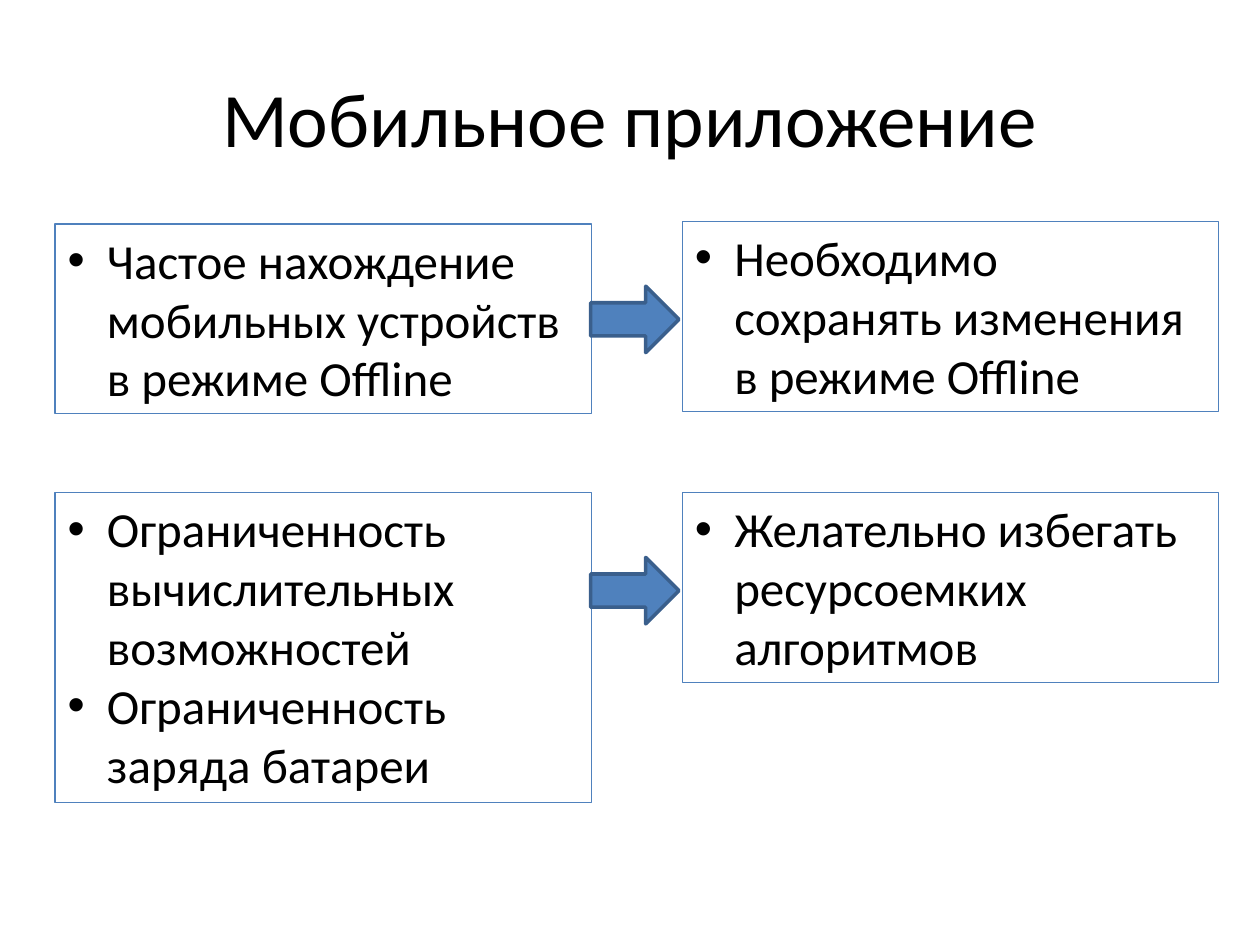
from dataclasses import dataclass

from lxml import etree
from pptx import Presentation
from pptx.dml.color import RGBColor
from pptx.enum.shapes import MSO_SHAPE
from pptx.enum.text import MSO_ANCHOR, MSO_AUTO_SIZE, PP_ALIGN
from pptx.oxml.ns import qn
from pptx.slide import Slide
from pptx.util import Pt

RECTANGLE = MSO_SHAPE.RECTANGLE
RIGHT_ARROW = MSO_SHAPE.RIGHT_ARROW
MIDDLE, TOP = MSO_ANCHOR.MIDDLE, MSO_ANCHOR.TOP
CENTER, LEFT = PP_ALIGN.CENTER, PP_ALIGN.LEFT
GROW = MSO_AUTO_SIZE.SHAPE_TO_FIT_TEXT
NO_AUTOFIT = MSO_AUTO_SIZE.NONE

BLACK = RGBColor(0x00, 0x00, 0x00)
BLUE = RGBColor(0x4F, 0x81, 0xBD)
DARK_BLUE = RGBColor(0x3A, 0x5F, 0x8C)

FONT = "Calibri"
BULLET_INDENT = Pt(22.5)
CAUSE_LEFT, EFFECT_LEFT, ARROW_LEFT = 31.5, 390, 337.5
BOX_WIDTH = 306.5
THREE_LINES, FIVE_LINES = 108.5, 177


@dataclass(frozen=True)
class BulletBox:
    left: float
    top: float
    height: float
    items: tuple[str, ...]


BOXES = (
    BulletBox(CAUSE_LEFT, 128, THREE_LINES,
              ("Частое нахождение мобильных устройств в режиме Offline",)),
    BulletBox(CAUSE_LEFT, 281.5, FIVE_LINES,
              ("Ограниченность вычислительных возможностей",
               "Ограниченность заряда батареи")),
    BulletBox(EFFECT_LEFT, 126.5, THREE_LINES,
              ("Необходимо сохранять изменения в режиме Offline",)),
    BulletBox(EFFECT_LEFT, 281.5, THREE_LINES,
              ("Желательно избегать ресурсоемких алгоритмов",)),
)
ARROW_TOPS = (163.5, 318.5)


def format_paragraph(para, size: float, alignment) -> None:
    para.alignment = alignment
    for span in para.runs:
        span.font.name = FONT
        span.font.size = Pt(size)
        span.font.color.rgb = BLACK


def add_bullet(para) -> None:
    properties = para._p.get_or_add_pPr()
    properties.set("marL", str(BULLET_INDENT))
    properties.set("indent", str(-BULLET_INDENT))
    etree.SubElement(properties, qn("a:buFont")).set("typeface", "Arial")
    etree.SubElement(properties, qn("a:buChar")).set("char", "•")


def add_title(page: Slide, text: str) -> None:
    title = page.shapes.title
    title.left, title.top = Pt(36), Pt(21.6)
    title.width, title.height = Pt(648), Pt(90)
    frame = title.text_frame
    frame.text = text
    frame.word_wrap = True
    frame.auto_size = NO_AUTOFIT
    frame.vertical_anchor = MIDDLE
    format_paragraph(frame.paragraphs[0], 44, CENTER)


def add_bullet_box(page: Slide, spec_box: BulletBox) -> None:
    box = page.shapes.add_shape(RECTANGLE, Pt(spec_box.left), Pt(spec_box.top),
                                Pt(BOX_WIDTH), Pt(spec_box.height))
    box.shadow.inherit = False
    box.fill.background()
    box.line.color.rgb = BLUE
    box.line.width = Pt(0.75)
    frame = box.text_frame
    frame.text = "\n".join(spec_box.items)
    frame.word_wrap = True
    frame.auto_size = GROW
    frame.vertical_anchor = TOP
    for para in frame.paragraphs:
        format_paragraph(para, 28, LEFT)
        add_bullet(para)


def add_arrow(page: Slide, top: float) -> None:
    arrow = page.shapes.add_shape(RIGHT_ARROW, Pt(ARROW_LEFT), Pt(top), Pt(50.5), Pt(38))
    arrow.shadow.inherit = False
    arrow.fill.solid()
    arrow.fill.fore_color.rgb = BLUE
    arrow.line.color.rgb = DARK_BLUE
    arrow.line.width = Pt(2)


def main() -> None:
    deck = Presentation()
    deck.slide_width, deck.slide_height = Pt(720), Pt(540)
    page = deck.slides.add_slide(deck.slide_layouts.get_by_name("Title Only"))
    add_title(page, "Мобильное приложение")
    for bullet_box in BOXES:
        add_bullet_box(page, bullet_box)
    for top in ARROW_TOPS:
        add_arrow(page, top)
    deck.save("out.pptx")


if __name__ == "__main__":
    main()
